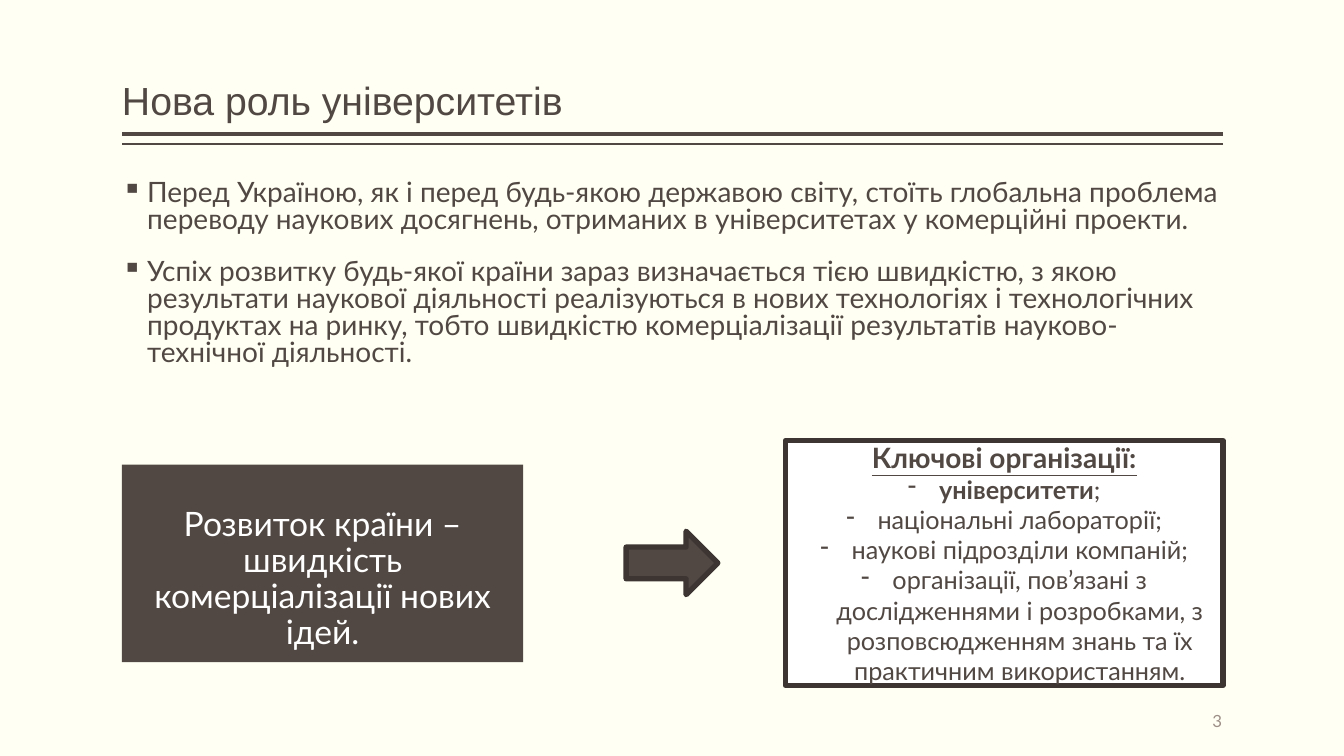
"""Build the slide about the new role of universities."""
import pptx
import pptx.dml.color
import pptx.enum.shapes
import pptx.enum.text
import pptx.oxml
import pptx.oxml.ns
import pptx.util
from pptx.util import Inches

COLOURS = {"page": "FFFFF3", "brown": "514843", "outline": "3C3532",
           "white": "FFFFFF", "number": "9D8F88"}
ALIGN = pptx.enum.text.PP_ALIGN
ANCHOR = pptx.enum.text.MSO_ANCHOR
SHAPE = pptx.enum.shapes.MSO_SHAPE
LEFT, RIGHT = 1.21, 12.13

THESES = [
    "Перед Україною, як і перед будь-якою державою світу, стоїть глобальна проблема "
    "переводу наукових досягнень, отриманих в університетах у комерційні проекти.",
    "Успіх розвитку будь-якої країни зараз визначається тією швидкістю, з якою "
    "результати наукової діяльності реалізуються в нових технологіях і технологічних "
    "продуктах на ринку, тобто швидкістю комерціалізації результатів "
    "науково-технічної діяльності.",
]
ORGANISATIONS = [
    "університети;",
    "національні лабораторії;",
    "наукові підрозділи компаній;",
    "організації, пов’язані з дослідженнями і розробками, з розповсюдженням знань "
    "та їх практичним використанням.",
]


def rgb(name):
    """Return the named colour."""
    return pptx.dml.color.RGBColor.from_string(COLOURS[name])


def add_rule(page, top, width):
    """Draw a horizontal rule under the title."""
    rule = page.shapes.add_connector(
        pptx.enum.shapes.MSO_CONNECTOR.STRAIGHT,
        Inches(RIGHT), Inches(top), Inches(LEFT), Inches(top))
    rule.line.color.rgb = rgb("brown")
    rule.line.width = pptx.util.Pt(width)
    rule._element.spPr.append(pptx.oxml.parse_xml(
        f'<a:effectLst {pptx.oxml.ns.nsdecls("a")}/>'))


def add_figure(page, kind, place, fill, outlined=False):
    """Add a filled preset shape, with a heavy rounded outline if asked."""
    figure = page.shapes.add_shape(kind, *map(Inches, place))
    figure.shadow.inherit = False
    figure.fill.solid()
    figure.fill.fore_color.rgb = rgb(fill)
    if outlined:
        figure.line.color.rgb = rgb("outline")
        figure.line.width = pptx.util.Pt(3.78)
        figure.line._get_or_add_ln().append(pptx.oxml.parse_xml(
            f'<a:round {pptx.oxml.ns.nsdecls("a")}/>'))
    else:
        figure.line.fill.background()
    return figure


def set_frame(box, anchor, side=0, top=0.05):
    """Set wrapping, anchor and insets of a text frame."""
    frame = box.text_frame
    frame.word_wrap = True
    frame.vertical_anchor = anchor
    frame.margin_left = frame.margin_right = Inches(side)
    frame.margin_top, frame.margin_bottom = Inches(top), Inches(0.05)
    return frame


def add_text_box(page, place, anchor=ANCHOR.TOP):
    """Add a text box and return its frame."""
    return set_frame(page.shapes.add_textbox(*map(Inches, place)), anchor)


def write(para, text, size, colour="brown", font="Lato", align=ALIGN.LEFT,
          spacing=1.0, before=0):
    """Write and format one paragraph."""
    para.text = text
    para.alignment = align
    para.line_spacing = spacing
    para.space_before = pptx.util.Pt(before)
    for span in para.runs:
        style(span, size, colour, font)


def style(span, size, colour="brown", font="Lato"):
    """Format one run."""
    span.font.size = pptx.util.Pt(size)
    span.font.name = font
    span.font.color.rgb = rgb(colour)


def set_bullet(para, character, indent):
    """Give a paragraph a hanging bullet."""
    properties = para._p.get_or_add_pPr()
    properties.set("marL", str(Inches(indent)))
    properties.set("indent", str(-Inches(indent)))
    properties.append(pptx.oxml.parse_xml(
        f'<a:buChar {pptx.oxml.ns.nsdecls("a")} char="{character}"/>'))


def add_theses(page):
    """Add the bulleted main text."""
    frame = add_text_box(page, (LEFT, 1.75, 10.92, 2.39))
    for index, thesis in enumerate(THESES):
        para = frame.add_paragraph() if index else frame.paragraphs[0]
        write(para, thesis, 20, spacing=0.8, before=18)
        set_bullet(para, "▪", 0.25)


def add_organisations(page):
    """Add the framed list of key organisations."""
    box = add_figure(page, SHAPE.RECTANGLE, (7.79, 4.37, 4.34, 2.43), "white", True)
    frame = set_frame(box, ANCHOR.MIDDLE, side=0.1)
    heading = frame.paragraphs[0]
    write(heading, "Ключові організації:", 20, align=ALIGN.CENTER)
    heading.runs[0].font.bold = heading.runs[0].font.underline = True
    for name in ORGANISATIONS:
        para = frame.add_paragraph()
        write(para, name, 18, align=ALIGN.CENTER)
        set_bullet(para, "-", 0.31)
    first = frame.paragraphs[1]
    first.runs[0].text = ORGANISATIONS[0].rstrip(";")
    first.runs[0].font.bold = True
    ending = first.add_run()
    ending.text = ";"
    style(ending, 18)


def main():
    """Build and save the deck."""
    deck = pptx.Presentation()
    deck.slide_width, deck.slide_height = Inches(13.33), Inches(7.5)
    page = deck.slides.add_slide(deck.slide_layouts[6])
    page.background.fill.solid()
    page.background.fill.fore_color.rgb = rgb("page")

    add_rule(page, 1.33, 3)
    add_rule(page, 1.43, 1)
    title = add_text_box(page, (LEFT, 0.08, 10.91, 1.2), ANCHOR.BOTTOM)
    write(title.paragraphs[0], "Нова роль університетів", 28, font="Arial", spacing=0.9)
    add_theses(page)

    growth = add_figure(page, SHAPE.RECTANGLE, (LEFT, 4.61, 3.98, 1.96), "brown")
    write(set_frame(growth, ANCHOR.TOP, top=0.42).paragraphs[0],
          "Розвиток країни – швидкість комерціалізації нових ідей.", 24,
          "white", align=ALIGN.CENTER, spacing=0.9)
    add_figure(page, SHAPE.RIGHT_ARROW, (6.21, 5.27, 0.91, 0.63), "brown", True)
    add_organisations(page)

    number = add_text_box(page, (10.12, 6.95, 2, 0.4), ANCHOR.MIDDLE)
    write(number.paragraphs[0], "3", 12, "number", align=ALIGN.RIGHT)
    deck.save("out.pptx")


if __name__ == "__main__":
    main()
